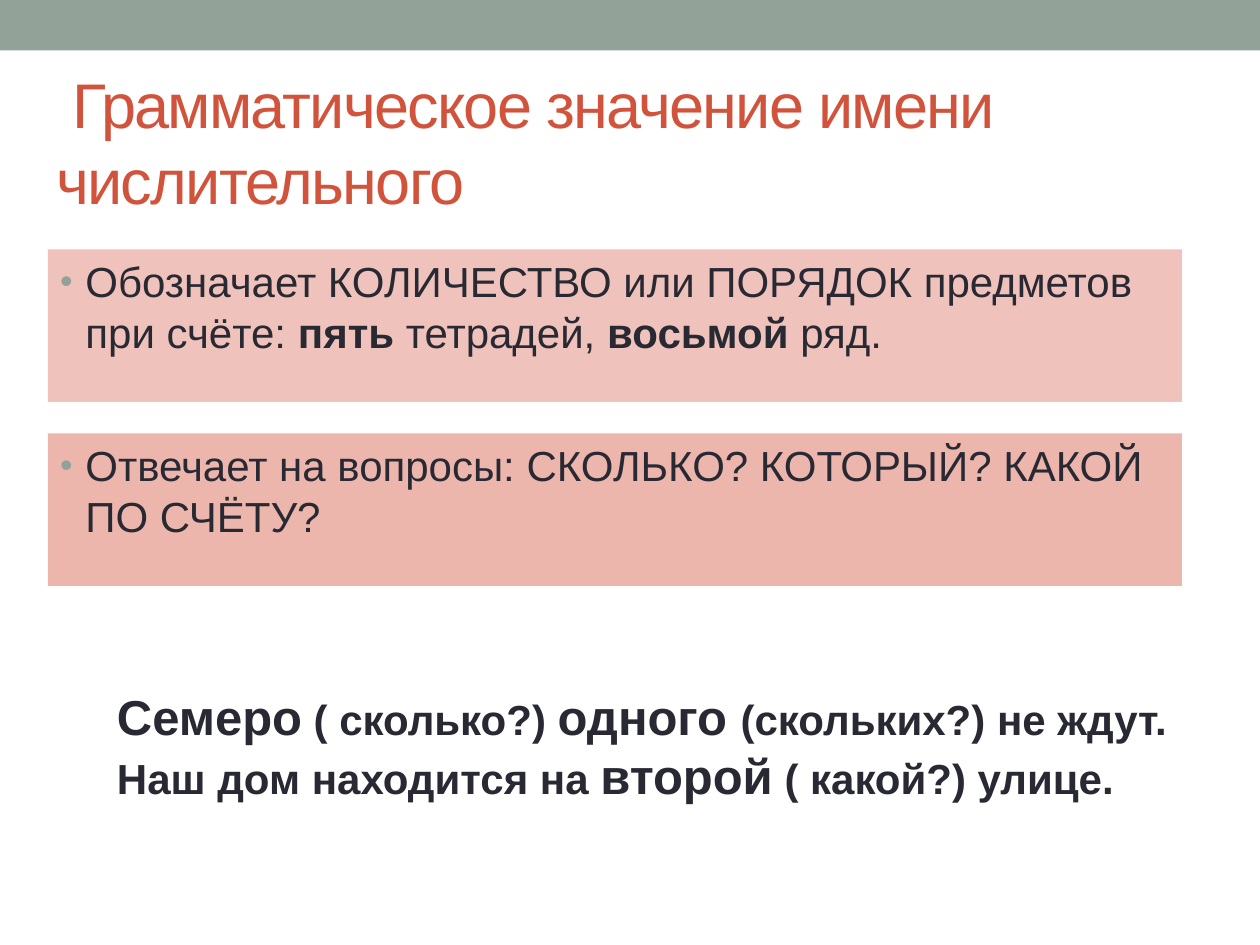
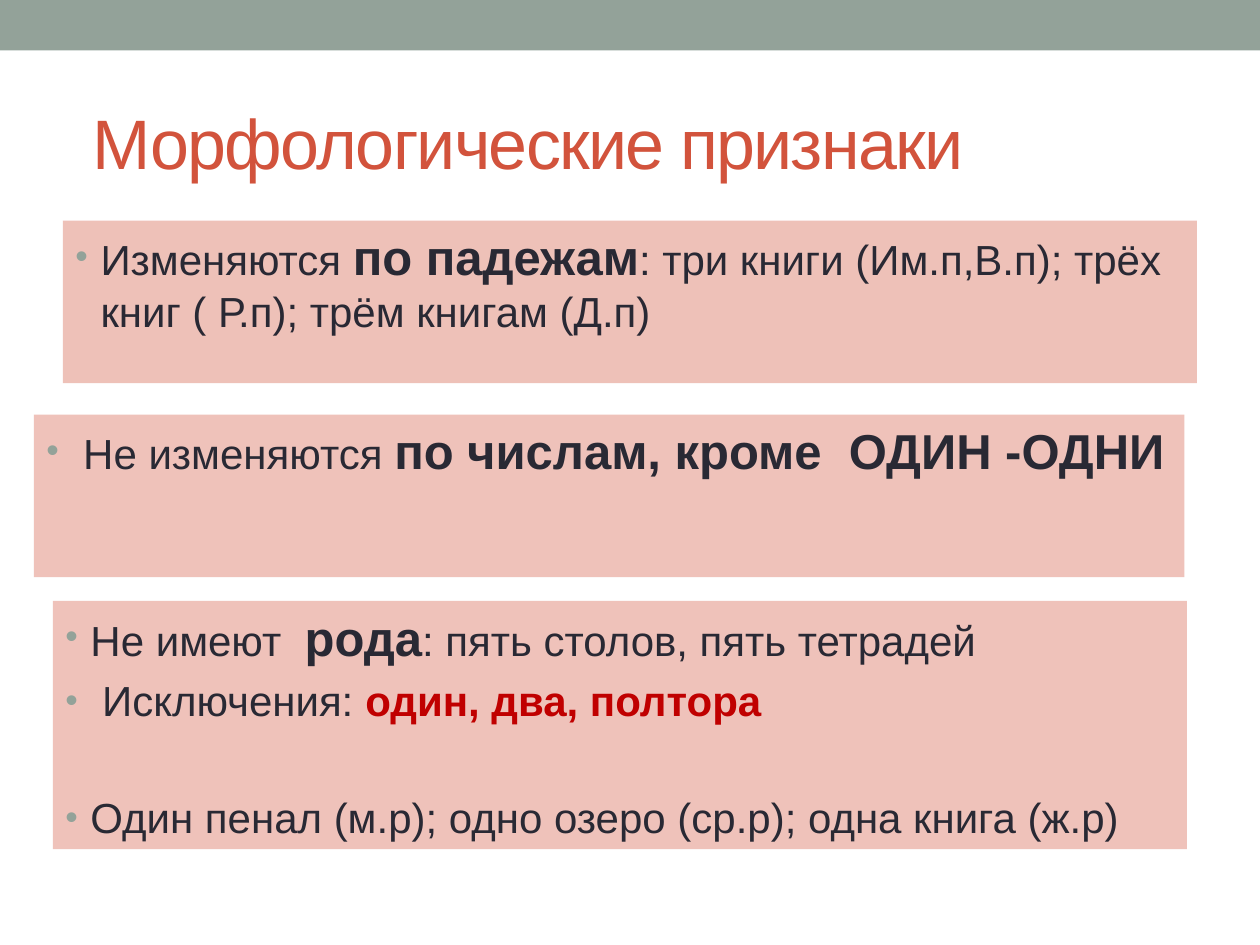
"""Build two slides on the meaning and the forms of the Russian numeral."""
from dataclasses import dataclass

from lxml import etree
from pptx import Presentation
from pptx import util as u
from pptx.dml.color import RGBColor
from pptx.enum import shapes, text
from pptx.oxml import ns

EMU_PER_PX = 9144
PAGE_WIDTH, PAGE_HEIGHT = 1000, 750


@dataclass(frozen=True)
class Theme:
    """Colours, font and type sizes of the deck."""
    font: str = "Arial"
    band: str = "93A299"
    title: str = "D2533C"
    ink: str = "292934"
    accent: str = "C00000"
    panel: str = "E4988A"
    body_size: int = 24
    key_size: int = 28
    spacing: int = 5
    section_gap: int = 38


THEME = Theme()
PLAIN = (THEME.body_size, THEME.ink, False)
BOLD = (THEME.body_size, THEME.ink, True)
KEY = (THEME.key_size, THEME.ink, True)
EXCEPTION = (THEME.body_size, THEME.accent, True)


def px(length):
    """Turn whole px into EMU."""
    return u.Emu(length * EMU_PER_PX)


def add_child(parent, tag, **attributes):
    """Append a DrawingML element with the given attributes."""
    return etree.SubElement(parent, ns.qn(tag), attributes)


def format_span(span, size, colour, bold):
    """Give a run its font, size, colour and weight."""
    span.font.name = THEME.font
    span.font.size = u.Pt(size)
    span.font.color.rgb = RGBColor.from_string(colour)
    span.font.bold = bold


def fill_paragraph(para, spans):
    """Write styled spans into a paragraph."""
    para.alignment = text.PP_ALIGN.LEFT
    for words, style in spans:
        span = para.add_run()
        span.text = words
        format_span(span, *style)


def add_bullet(para):
    """Give a paragraph a hanging bullet."""
    properties = para._p.get_or_add_pPr()
    properties.set("marL", str(px(20)))
    properties.set("indent", str(-px(20)))
    colour = add_child(properties, "a:buClr")
    add_child(colour, "a:srgbClr", val=THEME.band)
    add_child(properties, "a:buSzPct", val="85000")
    add_child(properties, "a:buFont", typeface=THEME.font)
    add_child(properties, "a:buChar", char="•")


def add_rectangle(page, place, colour, opacity=100):
    """Add a flat rectangle, see-through when opacity is below 100."""
    box = page.shapes.add_shape(shapes.MSO_SHAPE.RECTANGLE, *map(px, place))
    box.shadow.inherit = False
    box.line.fill.background()
    box.fill.solid()
    box.fill.fore_color.rgb = RGBColor.from_string(colour)
    if opacity < 100:
        tint = box._element.spPr.find(".//" + ns.qn("a:srgbClr"))
        add_child(tint, "a:alpha", val=str(opacity * 1000))
    return box


def add_text_box(page, place):
    """Add a wrapping text box and return its frame."""
    frame = page.shapes.add_textbox(*map(px, place)).text_frame
    frame.word_wrap = True
    return frame


def add_page(deck, title, title_place, title_size):
    """Add a blank slide with the top band and a title."""
    page = deck.slides.add_slide(deck.slide_layouts[6])
    add_rectangle(page, (0, 0, PAGE_WIDTH, 40), THEME.band)
    frame = add_text_box(page, title_place)
    frame.vertical_anchor = text.MSO_ANCHOR.MIDDLE
    frame.text = title
    span = frame.paragraphs[0].runs[0]
    format_span(span, title_size, THEME.title, False)
    span.font._element.set("spc", "-100")
    return page


def add_panel(page, place, opacity, *items, last_gap=THEME.spacing):
    """Add a tinted panel of bullets, with a chosen gap above the last."""
    frame = add_rectangle(page, place, THEME.panel, opacity).text_frame
    frame.word_wrap = True
    frame.vertical_anchor = text.MSO_ANCHOR.TOP
    for index, spans in enumerate(items):
        para = frame.add_paragraph() if index else frame.paragraphs[0]
        para.space_before = u.Pt(THEME.spacing)
        add_bullet(para)
        fill_paragraph(para, spans)
    if len(items) > 1:
        para.space_before = u.Pt(last_gap)


def add_examples(page, place, *sentences):
    """Add example sentences, one paragraph each."""
    frame = add_text_box(page, place)
    for index, spans in enumerate(sentences):
        para = frame.add_paragraph() if index else frame.paragraphs[0]
        fill_paragraph(para, spans)


def build_meaning(deck):
    """Build the slide on the meaning of the numeral."""
    page = add_page(deck, " Грамматическое значение имени числительного",
                    (35, 58, 937, 108), 36)
    add_panel(page, (38, 198, 900, 121), 58, [
        ("Обозначает КОЛИЧЕСТВО или ПОРЯДОК предметов при счёте: ", PLAIN),
        ("пять", BOLD), (" тетрадей, ", PLAIN),
        ("восьмой", BOLD), (" ряд.", PLAIN)])
    add_panel(page, (38, 344, 900, 121), 70, [
        ("Отвечает на вопросы: СКОЛЬКО? КОТОРЫЙ? КАКОЙ ПО СЧЁТУ?", PLAIN)])
    add_examples(
        page, (83, 540, 859, 104),
        [("Семеро", KEY), (" ( сколько?) ", BOLD),
         ("одного ", KEY), ("(скольких?) не ждут.", BOLD)],
        [("Наш дом находится на ", BOLD), ("второй", KEY),
         (" ( какой?) улице.", BOLD)])


def build_forms(deck):
    """Build the slide on the forms of the numeral."""
    page = add_page(deck, " Морфологические признаки", (50, 58, 900, 108), 40)
    add_panel(page, (50, 175, 900, 129), 60, [
        ("Изменяются ", PLAIN), ("по падежам", KEY),
        (": три книги (Им.п,В.п); трёх книг ( Р.п); трём книгам (Д.п)",
         PLAIN)])
    add_panel(page, (27, 329, 913, 129), 59, [
        (" Не изменяются ", PLAIN), ("по числам, кроме  ОДИН -ОДНИ", KEY)])
    add_panel(
        page, (42, 477, 900, 197), 59,
        [("Не имеют  ", PLAIN), ("рода", KEY),
         (": пять столов, пять тетрадей", PLAIN)],
        [(" Исключения: ", PLAIN), ("один, два, полтора", EXCEPTION)],
        [("Один пенал (м.р); одно озеро (ср.р); одна книга (ж.р)", PLAIN)],
        last_gap=THEME.section_gap)


def main():
    """Build and save the deck."""
    deck = Presentation()
    deck.slide_width, deck.slide_height = px(PAGE_WIDTH), px(PAGE_HEIGHT)
    build_meaning(deck)
    build_forms(deck)
    deck.save("out.pptx")


if __name__ == "__main__":
    main()
